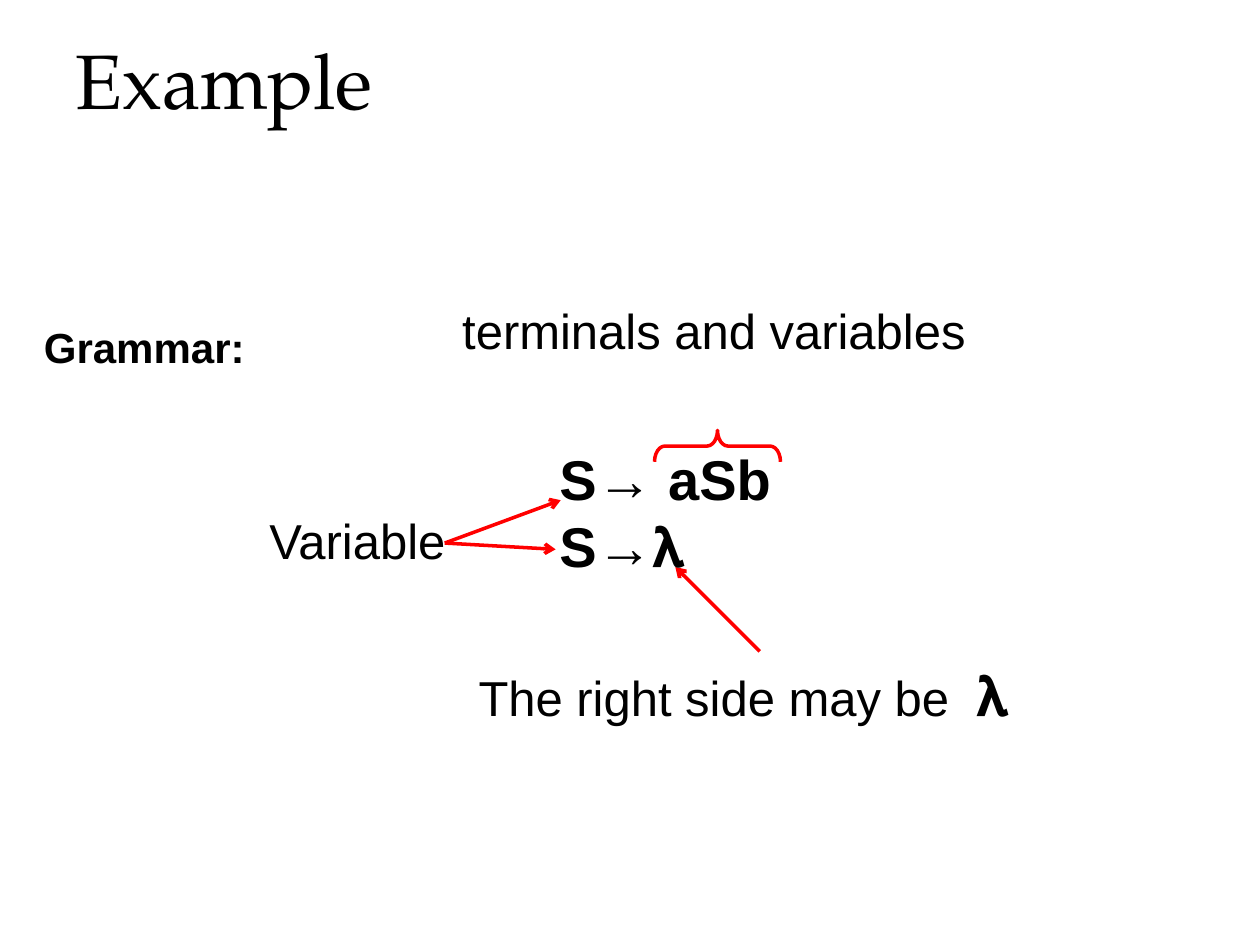
import pptx
import pptx.util
import pptx.dml.color
import pptx.enum.shapes
import pptx.enum.text
import pptx.oxml.ns
from lxml import etree

Inches, Pt = pptx.util.Inches, pptx.util.Pt
kinds = pptx.enum.shapes

# Formats
INK, RED = "000000", "FF0000"
HEAD = {"name": "TeX Gyre Pagella", "size": Pt(44), "bold": False}
LABEL = {"name": "Arial", "size": Pt(24), "bold": True}
NOTE = {"name": "Arial", "size": Pt(28), "bold": False}
RULE = {"name": "Arial", "size": Pt(32), "bold": True}

# Content: box, wrap, paragraphs of (text, format, extra letter spacing in pt)
TEXTS = [
    ((0.5, 0, 9, 1.25), True, [[("Example", HEAD, 0)]]),
    ((0.25, 2.5, 1.81, 0.5), False, [[("Grammar:", LABEL, 0)]]),
    ((2.04, 4, 1.7, 0.57), False, [[("Variable", NOTE, 0)]]),
    ((3.57, 2.33, 4.29, 0.57), True, [[("terminals and variables", NOTE, 0)]]),
    ((3.7, 5.19, 4.64, 0.64), True,
     [[("The right side may be", NOTE, 0), (" ", NOTE, 7.8), ("𝛌", RULE, 0)]]),
    ((4.34, 3.47, 2.42, 1.18), True,
     [[("S→ aSb", RULE, 0)], [("S→𝛌", RULE, 0)]]),
]
FORK = (3.53, 4.31)
ARROWS = [
    (FORK, (4.41, 4.36)),
    (FORK, (4.45, 3.97)),
    ((6.03, 5.17), (5.36, 4.5)),
]
BRACE = (5.57, 3.04, 0.25, 1)


def paint(color, value):
    color.rgb = pptx.dml.color.RGBColor.from_string(value)


def stroke(line):
    paint(line.color, RED)
    line.width = Pt(2)


def write(box, wrap, paras):
    frame = slide.shapes.add_textbox(*map(Inches, box)).text_frame
    frame.word_wrap = wrap
    frame.vertical_anchor = pptx.enum.text.MSO_ANCHOR.MIDDLE
    for i, runs in enumerate(paras):
        para = frame.add_paragraph() if i else frame.paragraphs[0]
        for text, style, gap in runs:
            run = para.add_run()
            run.text = text
            for key, value in style.items():
                setattr(run.font, key, value)
            paint(run.font.color, INK)
            if gap:
                run.font._element.set("spc", str(round(gap * 100)))


def point(start, end):
    arrow = slide.shapes.add_connector(
        kinds.MSO_CONNECTOR.STRAIGHT, *map(Inches, start + end))
    stroke(arrow.line)
    props = arrow._element.spPr
    tail = pptx.oxml.ns.qn("a:tailEnd")
    etree.SubElement(arrow.line._get_or_add_ln(), tail, type="arrow")
    etree.SubElement(props, pptx.oxml.ns.qn("a:effectLst"))


deck = pptx.Presentation()
deck.slide_width, deck.slide_height = Inches(10), Inches(7.5)
slide = deck.slides.add_slide(deck.slide_layouts[6])

# Arrows from the labels to the grammar
for start, end in ARROWS:
    point(start, end)

# Brace above the right side of the first rule
brace = slide.shapes.add_shape(
    kinds.MSO_SHAPE.RIGHT_BRACE, *map(Inches, BRACE))
brace.rotation = 270
brace.adjustments[0] = 0.33
brace.shadow.inherit = False
brace.fill.background()
stroke(brace.line)

# Title, labels and rules
for item in TEXTS:
    write(*item)

deck.save("out.pptx")
